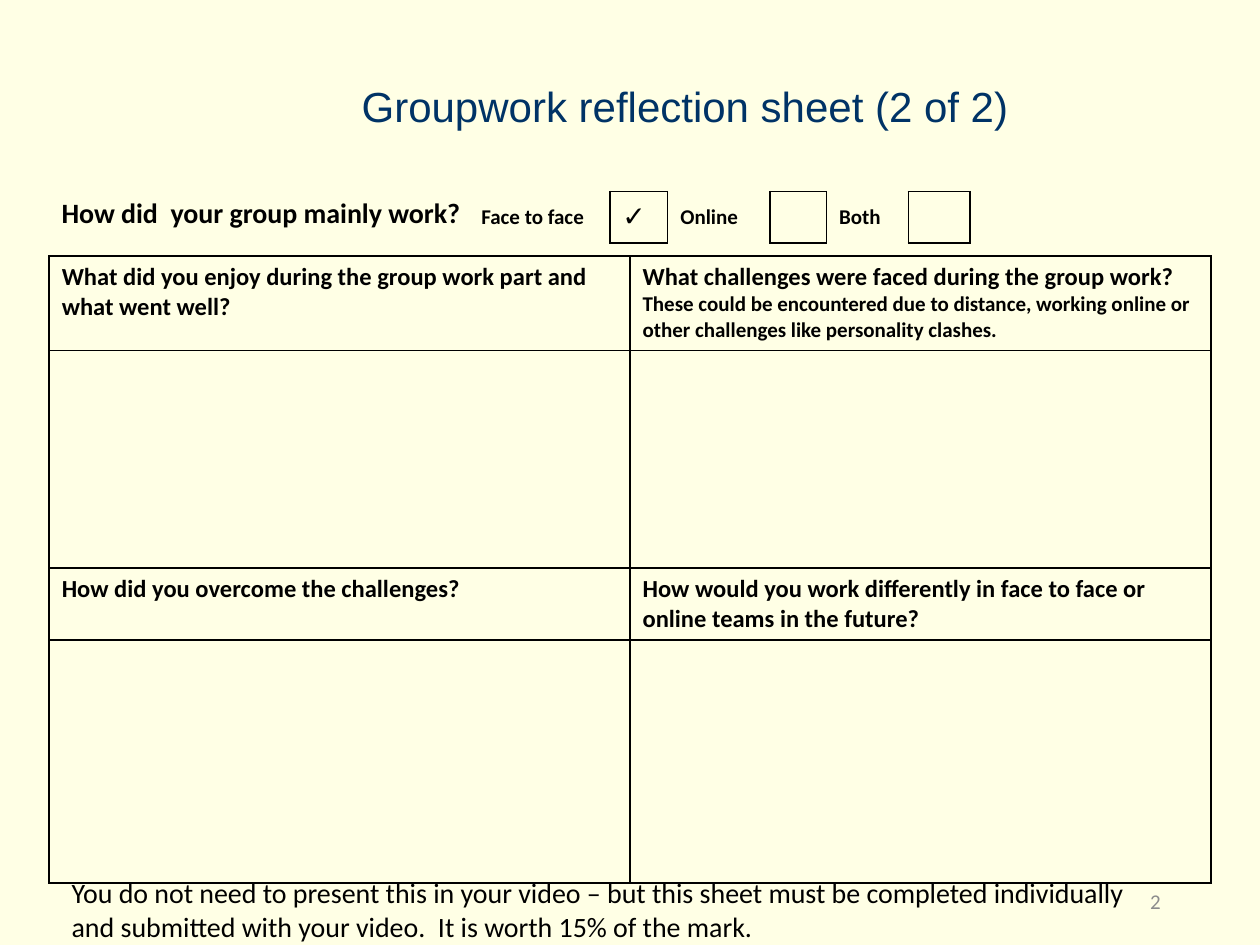
from lxml import etree
from pptx import Presentation
from pptx.dml.color import RGBColor
from pptx.enum.text import MSO_ANCHOR as Anchor, PP_ALIGN as Align
from pptx.oxml.ns import qn
from pptx.util import Inches, Pt

BLACK = RGBColor(0, 0, 0)
NAVY = RGBColor(0x00, 0x33, 0x66)
GREY = RGBColor(0x8C, 0x8C, 0x8C)
CREAM = RGBColor(0xFF, 0xFF, 0xE5)

TITLE = "Groupwork reflection sheet (2 of 2)"
MODE_QUESTION = "How did  your group mainly work?"
MODES = [("Face to face", "✓"), ("Online", ""), ("Both", "")]
MODE_WIDTHS = [1.12, 0.46, 0.81, 0.45, 0.65, 0.49]
REFLECTIONS = [
    [
        [("What did you enjoy during the group work part and what went well?", 14)],
        [
            ("What challenges were faced during the group work? ", 14),
            ("These could be encountered due to distance, working online or "
             "other challenges like personality clashes.", 12),
        ],
    ],
    [
        [("How did you overcome the challenges?", 14)],
        [("How would you work differently in face to face or online teams "
          "in the future?", 14)],
    ],
]
REFLECTION_HEIGHTS = [0.75, 1.73, 0.57, 1.93]
NOTE = ("You do not need to present this in your video – but this sheet must be "
        "completed individually and submitted with your video.  "
        "It is worth 15% of the mark.")


def write(para, spans, color=BLACK, bold=False, name="Calibri"):
    for text, size in spans:
        span = para.add_run()
        span.text = text
        span.font.size = Pt(size)
        span.font.name = name
        span.font.bold = bold
        span.font.color.rgb = color


def add_text(page, place, text, size, color=BLACK, bold=False):
    box = page.shapes.add_textbox(*map(Inches, place))
    box.text_frame.word_wrap = True
    write(box.text_frame.paragraphs[0], [(text, size)], color, bold)
    return box


def set_borders(cell, sides):
    properties = cell._tc.get_or_add_tcPr()
    for index, side in enumerate("LRTB"):
        line = etree.Element(qn(f"a:ln{side}"), w=str(Pt(1)))
        if side in sides:
            fill = etree.SubElement(line, qn("a:solidFill"))
            etree.SubElement(fill, qn("a:srgbClr"), val=str(BLACK))
        else:
            etree.SubElement(line, qn("a:noFill"))
        properties.insert(index, line)


def add_grid(page, left, top, widths, heights):
    place = map(Inches, (left, top, sum(widths), sum(heights)))
    table = page.shapes.add_table(len(heights), len(widths), *place).table
    table.first_row = table.horz_banding = False
    for column, width in zip(table.columns, widths):
        column.width = Inches(width)
    for row, height in zip(table.rows, heights):
        row.height = Inches(height)
    for cell in table.iter_cells():
        cell.fill.background()
    return table


def add_reflections(page):
    table = add_grid(page, 0.39, 2.03, [4.61, 4.61], REFLECTION_HEIGHTS)
    for cell in table.iter_cells():
        set_borders(cell, "LRTB")
    for index, questions in enumerate(REFLECTIONS):
        for column, spans in enumerate(questions):
            cell = table.cell(2 * index, column)
            write(cell.text_frame.paragraphs[0], spans, bold=True)


def add_modes(page):
    table = add_grid(page, 3.72, 1.52, MODE_WIDTHS, [0.41])
    for index, (label, mark) in enumerate(MODES):
        label_cell, mark_cell = table.cell(0, 2 * index), table.cell(0, 2 * index + 1)
        set_borders(label_cell, "LR" if index else "R")
        set_borders(mark_cell, "LRTB")
        for cell, text, size in ((label_cell, label, 12), (mark_cell, mark, 16)):
            cell.vertical_anchor = Anchor.MIDDLE
            if text:
                write(cell.text_frame.paragraphs[0], [(text, size)], bold=True)


def add_title(page):
    title = page.shapes.title
    title.left, title.top, title.width, title.height = map(
        Inches, (2.77, 0.34, 5.57, 1.05))
    title.text_frame.vertical_anchor = Anchor.MIDDLE
    para = title.text_frame.paragraphs[0]
    para.alignment = Align.LEFT
    para.line_spacing = 0.9
    write(para, [(TITLE, 24)], NAVY, name="Arial")


def main():
    deck = Presentation()
    deck.slide_width, deck.slide_height = Inches(10), Inches(7.5)
    page = deck.slides.add_slide(deck.slide_layouts[5])
    page.background.fill.solid()
    page.background.fill.fore_color.rgb = CREAM

    add_title(page)
    number = add_text(page, (7.06, 6.95, 2.25, 0.4), "2", 12, GREY)
    number.text_frame.vertical_anchor = Anchor.MIDDLE
    number.text_frame.paragraphs[0].alignment = Align.RIGHT
    add_reflections(page)
    add_modes(page)
    add_text(page, (0.47, 6.9, 8.92, 0.64), NOTE, 16)
    add_text(page, (0.39, 1.5, 3.44, 0.37), MODE_QUESTION, 16, bold=True)
    deck.save("out.pptx")


if __name__ == "__main__":
    main()
